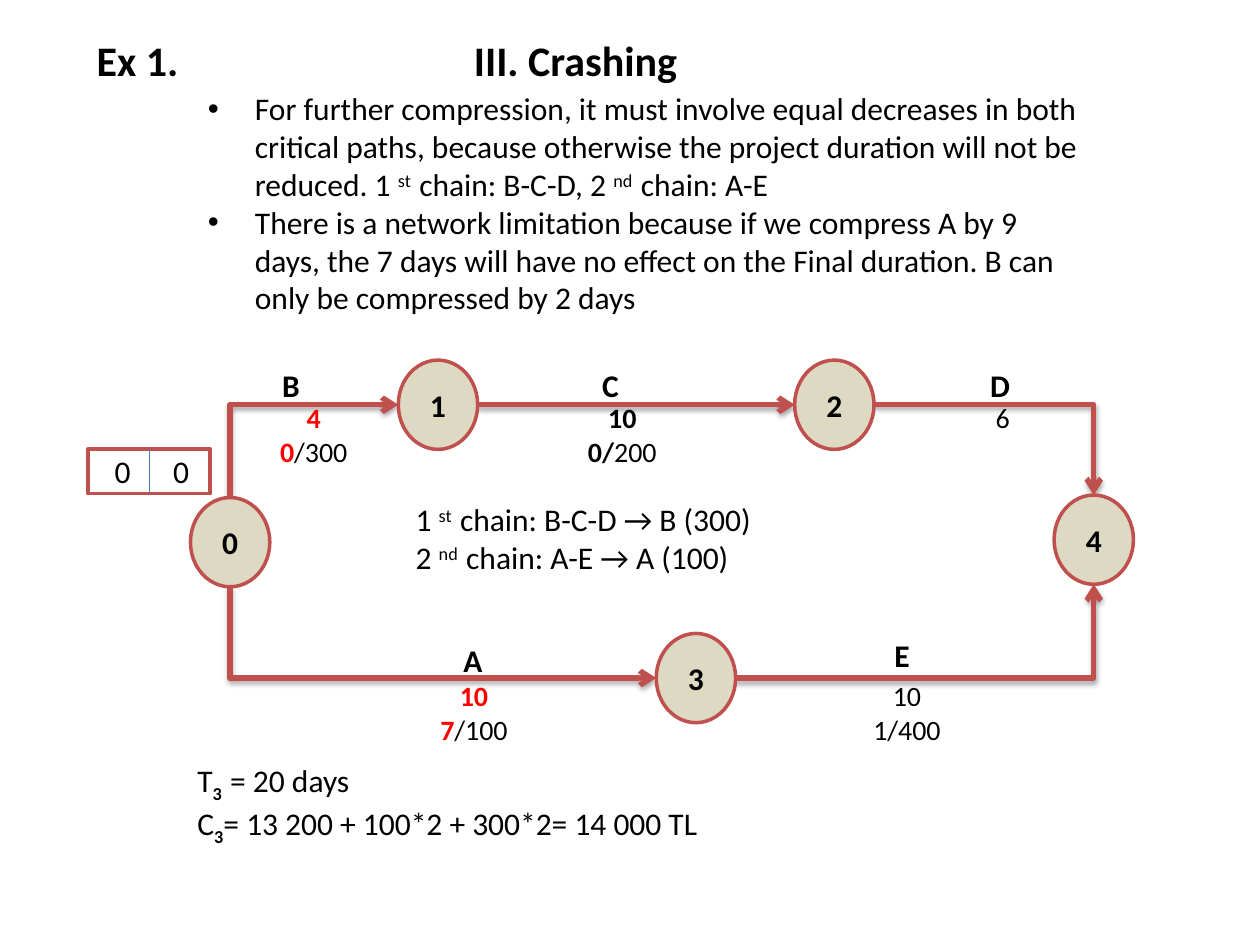
from dataclasses import dataclass
from typing import NamedTuple

from lxml.etree import SubElement
from pptx import Presentation
from pptx.dml.color import RGBColor
from pptx.enum.shapes import MSO_CONNECTOR as Wire, MSO_SHAPE as Form
from pptx.enum.text import MSO_ANCHOR as Anchor, PP_ALIGN as Align
from pptx.oxml.ns import qn
from pptx.util import Cm, Pt

FONT = "Calibri"
BLACK, RED, WHITE = "000000", "FF0000", "FFFFFF"
EDGE, SAND, BLUE = "C0504D", "DDD9C3", "4B7EBC"
NODE_W, NODE_H = 1.6, 1.8


class Run(NamedTuple):
    text: str
    bold: bool = False
    color: str = BLACK
    base: int = 0


@dataclass
class Node:
    name: str
    x: float
    y: float

    def side(self, key: str) -> tuple[float, float]:
        """Give the middle of the left, right, top or bottom side."""
        dx, dy = {"l": (-1, 0), "r": (1, 0), "t": (0, -1), "b": (0, 1)}[key]
        return self.x + dx * NODE_W / 2, self.y + dy * NODE_H / 2


class Link(NamedTuple):
    """A link that leaves its first node level; the arrow is at head or tail."""
    start: int
    out: str
    end: int
    into: str
    arrow: str = "tailEnd"


class Task(NamedTuple):
    name: str
    name_at: tuple[float, float]
    cost_at: tuple[float, float]
    cost: list[Run]
    size: tuple[float, float] = (2.59, 1.63)


NODES = [
    Node("0", 4.64, 10.93),
    Node("1", 8.83, 8.16),
    Node("2", 16.82, 8.16),
    Node("3", 14.03, 13.67),
    Node("4", 22.05, 10.88),
]
LINKS = [
    Link(1, "l", 0, "t", "headEnd"),
    Link(1, "r", 2, "l"),
    Link(2, "r", 4, "t"),
    Link(3, "l", 0, "b", "headEnd"),
    Link(3, "r", 4, "b"),
]
TASKS = [
    Task("B", (5.44, 7.26), (5.03, 7.95), [Run("4\n0", True, RED), Run("/300")]),
    Task("C", (11.89, 7.26), (11.25, 7.95), [Run("10\n0/", True), Run("200")]),
    Task("D", (19.71, 7.26), (19.68, 7.95), [Run("6")], (1.07, 0.94)),
    Task("A", (9.09, 12.8), (8.26, 13.56), [Run("10\n7", True, RED), Run("/100")]),
    Task("E", (17.78, 12.7), (16.99, 13.56), [Run("10\n1/400")]),
]


def rgb(code: str) -> RGBColor:
    return RGBColor.from_string(code)


def write(frame, *paras: list[Run], size=18, align=Align.LEFT,
          anchor=Anchor.TOP, bullet=False) -> None:
    frame.word_wrap = True
    frame.vertical_anchor = anchor
    for i, runs in enumerate(paras):
        p = frame.add_paragraph() if i else frame.paragraphs[0]
        p.alignment = align
        if bullet:
            props = p._p.get_or_add_pPr()
            props.set("marL", str(Cm(0.95)))
            props.set("indent", str(-Cm(0.95)))
            SubElement(props, qn("a:buFont"), typeface="Arial")
            SubElement(props, qn("a:buChar"), char="•")
        for run in runs:
            for n, part in enumerate(run.text.split("\n")):
                if n:
                    p.add_line_break()
                    SubElement(p._p[-1], qn("a:rPr"), sz=str(size * 100))
                r = p.add_run()
                r.text = part
                font = r.font
                font.name, font.size, font.bold = FONT, Pt(size), run.bold
                font.color.rgb = rgb(run.color)
                if run.base:
                    font._element.set("baseline", str(run.base * 1000))


def add_text(slide, x: float, y: float, w: float, h: float, *paras, **style):
    box = slide.shapes.add_textbox(Cm(x), Cm(y), Cm(w), Cm(h))
    write(box.text_frame, *paras, **style)


def add_box(slide, form, x: float, y: float, w: float, h: float, fill: str):
    box = slide.shapes.add_shape(form, Cm(x), Cm(y), Cm(w), Cm(h))
    box.shadow.inherit = False
    box.fill.solid()
    box.fill.fore_color.rgb = rgb(fill)
    box.line.color.rgb = rgb(EDGE)
    box.line.width = Pt(2)
    return box


def add_node(slide, node: Node) -> None:
    x, y = node.x - NODE_W / 2, node.y - NODE_H / 2
    box = add_box(slide, Form.OVAL, x, y, NODE_W, NODE_H, SAND)
    write(box.text_frame, [Run(node.name, True)],
          align=Align.CENTER, anchor=Anchor.MIDDLE)


def add_wire(slide, kind, start, end, color: str, width: float):
    """Draw a connector and return it with its empty effect list."""
    wire = slide.shapes.add_connector(kind, *map(Cm, (*start, *end)))
    wire.line.color.rgb = rgb(color)
    wire.line.width = Pt(width)
    return wire, SubElement(wire._element.spPr, qn("a:effectLst"))


def add_link(slide, link: Link) -> None:
    start = NODES[link.start].side(link.out)
    end = NODES[link.end].side(link.into)
    bent = link.into in "tb"
    kind = Wire.ELBOW if bent else Wire.STRAIGHT
    wire, effects = add_wire(slide, kind, start, end, EDGE, 3)
    if bent:
        wire._element.spPr.find(qn("a:prstGeom")).set("prst", "bentConnector2")
    SubElement(wire.line._get_or_add_ln(), qn(f"a:{link.arrow}"), type="arrow")
    shade = SubElement(effects, qn("a:outerShdw"), blurRad=str(Pt(3.1)),
                       dist=str(Pt(1.8)), dir="5400000", rotWithShape="0")
    tint = SubElement(shade, qn("a:srgbClr"), val=BLACK)
    SubElement(tint, qn("a:alpha"), val="35000")


def add_task(slide, task: Task) -> None:
    add_text(slide, *task.name_at, 1.35, 1.02, [Run(task.name, True)])
    add_text(slide, *task.cost_at, *task.size, task.cost,
             size=16, align=Align.CENTER)


def add_times(slide) -> None:
    """Draw the two-part box with the early and late time of node 0."""
    x, y, w, h = 1.78, 9.05, 2.46, 0.9
    box = add_box(slide, Form.RECTANGLE, x, y, w, h, WHITE)
    frame = box.text_frame
    write(frame, [Run("0\t0")], anchor=Anchor.MIDDLE)
    frame.margin_left = Cm(0.53)
    tabs = SubElement(frame.paragraphs[0]._p.get_or_add_pPr(), qn("a:tabLst"))
    SubElement(tabs, qn("a:tab"), pos=str(Cm(1.18)), algn="l")
    mid = x + w / 2
    add_wire(slide, Wire.STRAIGHT, (mid, y), (mid, y + h), BLUE, 0.75)


def main() -> None:
    deck = Presentation()
    deck.slide_width, deck.slide_height = Cm(25.4), Cm(19.05)
    slide = deck.slides.add_slide(deck.slide_layouts[5])

    title = slide.shapes.title
    title.left, title.top, title.width, title.height = map(
        Cm, (9.3, 0.56, 7.52, 1.27))
    write(title.text_frame, [Run("III. Crashing", True)], size=24)
    add_text(slide, 1.7, 0.58, 7.52, 1.27, [Run("Ex 1.", True)], size=24)

    first, second = Run("st  ", base=30), Run("nd  ", base=30)
    add_text(
        slide, 3.94, 1.68, 18.24, 4.88,
        [Run("For further compression, it must involve equal decreases in both "
             "critical paths, because otherwise the project duration will not "
             "be reduced. 1 "), first, Run("chain: B-C-D, 2 "), second,
         Run("chain: A-E")],
        [Run("There is a network limitation because if we compress A by 9 days, "
             "the 7 days will have no effect on the Final duration. B can only "
             "be compressed by 2 days")],
        bullet=True)

    for link in LINKS:
        add_link(slide, link)
    for node in NODES:
        add_node(slide, node)
    add_times(slide)
    for task in TASKS:
        add_task(slide, task)

    add_text(slide, 8.13, 9.96, 10.19, 2.57,
             [Run("1 "), first, Run("chain: B-C-D → B (300)")],
             [Run("2 "), second, Run("chain: A-E → A (100)")])
    add_text(slide, 3.73, 15.21, 12.73, 1.8,
             [Run("T"), Run("3  ", True, base=-25), Run("= 20 days")],
             [Run("C"), Run("3", True, base=-25),
              Run("= 13 200 + 100*2 + 300*2= 14 000 TL")])
    deck.save("out.pptx")


if __name__ == "__main__":
    main()
